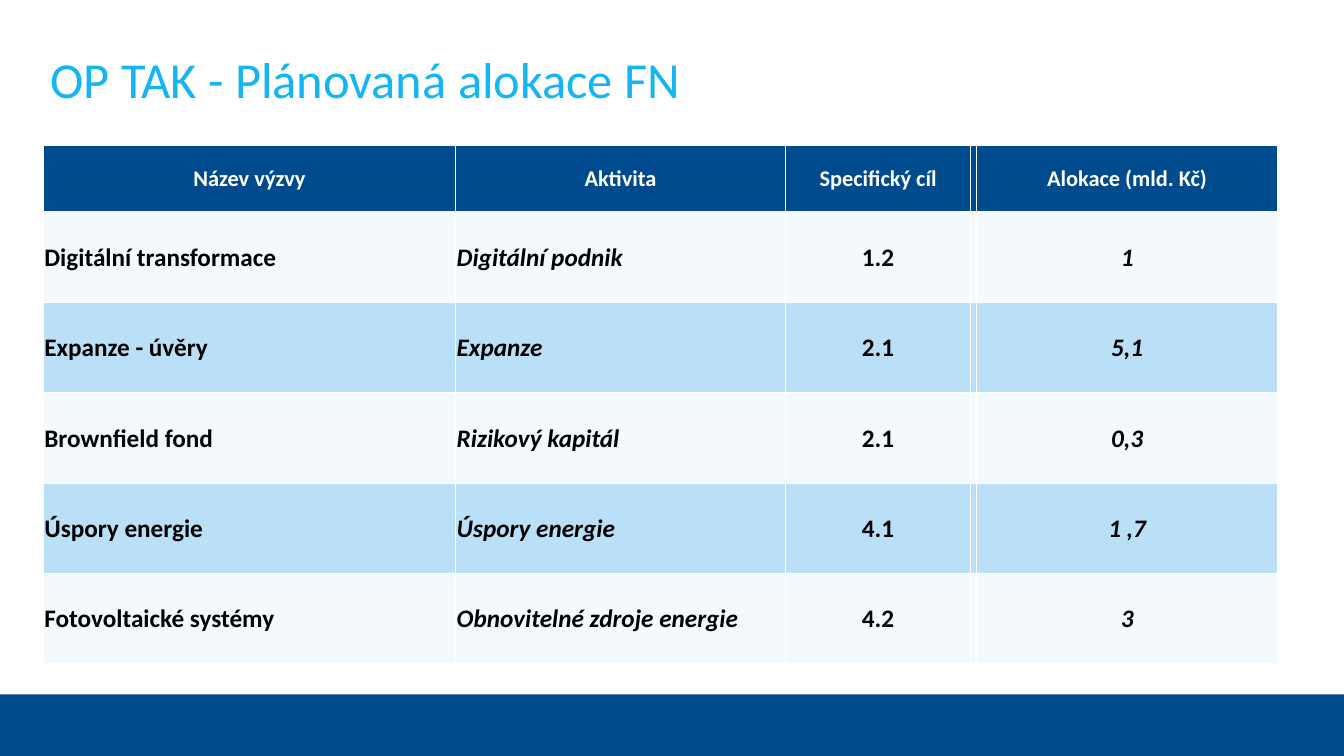
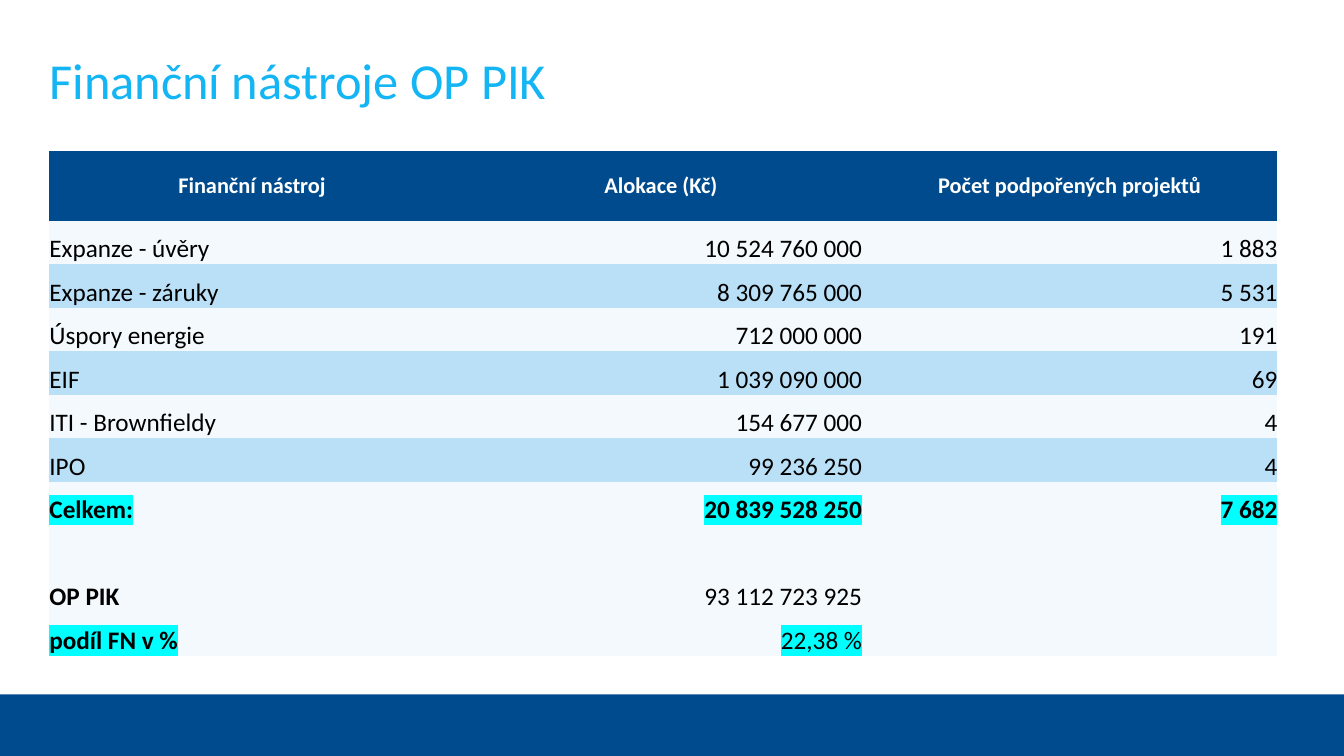
from dataclasses import dataclass

from lxml.etree import SubElement
from pptx import Presentation
from pptx.dml.color import RGBColor
from pptx.enum.shapes import MSO_SHAPE
from pptx.enum.text import MSO_ANCHOR, PP_ALIGN
from pptx.oxml.ns import qn
from pptx.util import Inches, Pt

COLORS = {
    "navy": "004B8D",
    "sky": "13B5F4",
    "white": "FFFFFF",
    "black": "000000",
    "light": "F3F9FD",
    "stripe": "B9E0F7",
    "marker": "00FFFF",
}
FONT = "Calibri"
PLAIN_TABLE_STYLE = "{2D5ABB26-0587-4C30-8999-92F81FD0307C}"
LEFT, CENTER, RIGHT = PP_ALIGN.LEFT, PP_ALIGN.CENTER, PP_ALIGN.RIGHT


@dataclass
class Look:
    """Text style of a table cell."""
    align: PP_ALIGN = LEFT
    anchor: MSO_ANCHOR = MSO_ANCHOR.MIDDLE
    size: int = 18
    color: str = "black"
    bold: bool = False
    italic: bool = False
    marked: bool = False


HEADER = Look(CENTER, size=16, color="white", bold=True)

# Planned allocation: widths, looks and rows; the fourth column is a thin gap
PLAN_WIDTHS = [4.09, 3.27, 1.84, 0.06, 2.98]
PLAN_LOOKS = [
    Look(bold=True),
    Look(bold=True, italic=True),
    Look(CENTER, bold=True),
    Look(),
    Look(CENTER, bold=True, italic=True),
]
PLAN_ROWS = [
    ["Název výzvy", "Aktivita", "Specifický cíl", "", "Alokace (mld. Kč)"],
    ["Digitální transformace", "Digitální podnik", "1.2", "", "1"],
    ["Expanze - úvěry", "Expanze", "2.1", "", "5,1"],
    ["Brownfield fond", "Rizikový kapitál", "2.1", "", "0,3"],
    ["Úspory energie", "Úspory energie", "4.1", "", "1 ,7"],
    ["Fotovoltaické systémy", "Obnovitelné zdroje energie", "4.2", "", "3"],
]

# Financial instruments: widths and rows, with totals after the striped rows
RESULT_WIDTHS = [4.07, 3.99, 4.12]
RESULT_ROWS = [
    ["Finanční nástroj ", "Alokace (Kč)", "Počet podpořených projektů"],
    ["Expanze - úvěry", "10 524 760 000", "1 883"],
    ["Expanze - záruky", "8 309 765 000", "5 531"],
    ["Úspory energie", "712 000 000", "191"],
    ["EIF", "1 039 090 000", "69"],
    ["ITI - Brownfieldy", "154 677 000", "4"],
    ["IPO", "99 236 250", "4"],
    ["Celkem:", "20 839 528 250", "7 682"],
    ["", "", ""],
    ["OP PIK", "93 112 723 925", ""],
    ["podíl FN v %", "22,38 %", ""],
]
TOTAL_ROW, PROGRAM_ROW, SHARE_ROW = 7, 9, 10


def rgb(name):
    return RGBColor.from_string(COLORS[name])


def add_span(para, text, look):
    span = para.add_run()
    span.text = text
    font = span.font
    font.size = Pt(look.size)
    font.bold, font.italic = look.bold, look.italic
    font.color.rgb = rgb(look.color)
    font.name = FONT
    if look.marked:
        properties = span._r.get_or_add_rPr()
        highlight = SubElement(properties, qn("a:highlight"))
        SubElement(highlight, qn("a:srgbClr"), val=COLORS["marker"])
        properties.find(qn("a:solidFill")).addnext(highlight)


def add_page(deck, title, left, top):
    """Page with a white area above the navy band, and a title."""
    page = deck.slides.add_slide(deck.slide_layouts[6])
    page.background.fill.solid()
    page.background.fill.fore_color.rgb = rgb("navy")
    area = page.shapes.add_shape(
        MSO_SHAPE.RECTANGLE, 0, 0, deck.slide_width, Inches(6.89))
    area.shadow.inherit = False
    area.fill.solid()
    area.fill.fore_color.rgb = rgb("white")
    area.line.fill.background()

    box = page.shapes.add_textbox(
        Inches(left), Inches(top), Inches(12.02), Inches(0.61))
    frame = box.text_frame
    frame.word_wrap = True
    frame.margin_left = frame.margin_right = 0
    frame.margin_top = frame.margin_bottom = 0
    add_span(frame.paragraphs[0], title, Look(size=36, color="sky"))
    return page


def add_borders(cell):
    properties = cell._tc.get_or_add_tcPr()
    for side in ("lnL", "lnR", "lnT", "lnB"):
        line = SubElement(properties, qn(f"a:{side}"), w=str(Pt(1)))
        fill = SubElement(line, qn("a:solidFill"))
        SubElement(fill, qn("a:srgbClr"), val=COLORS["white"])


def fill_cell(cell, text, look, fill, margin):
    cell.margin_left = cell.margin_right = cell.margin_top = Inches(margin)
    cell.margin_bottom = 0
    cell.vertical_anchor = look.anchor
    cell.fill.solid()
    cell.fill.fore_color.rgb = rgb(fill)
    if text:
        para = cell.text_frame.paragraphs[0]
        para.alignment = look.align
        add_span(para, text, look)


def add_grid(page, place, header_height, widths, rows, look_at,
             striped_until, margin=0, bordered=False):
    """Table with a navy header; the body rows share the remaining height."""
    left, top, height = place
    table = page.shapes.add_table(
        len(rows), len(widths), Inches(left), Inches(top),
        Inches(sum(widths)), Inches(height)).table
    table._tbl.tblPr.find(qn("a:tableStyleId")).text = PLAIN_TABLE_STYLE
    for column, width in zip(table.columns, widths):
        column.width = Inches(width)
    body_height = (height - header_height) / (len(rows) - 1)
    for r, texts in enumerate(rows):
        table.rows[r].height = Inches(body_height if r else header_height)
        striped = r % 2 == 0 and r <= striped_until
        fill = "navy" if r == 0 else "stripe" if striped else "light"
        for c, text in enumerate(texts):
            cell = table.cell(r, c)
            if bordered:
                add_borders(cell)
            look = look_at(r, c) if r else HEADER
            fill_cell(cell, text, look, fill, margin)


def plan_look(row, column):
    return PLAN_LOOKS[column]


def result_look(row, column):
    summary = row in (PROGRAM_ROW, SHARE_ROW)
    return Look(
        RIGHT if column else LEFT,
        MSO_ANCHOR.BOTTOM,
        bold=row == TOTAL_ROW or (summary and column == 0),
        marked=row in (TOTAL_ROW, SHARE_ROW),
    )


def main():
    deck = Presentation()
    deck.slide_width, deck.slide_height = Inches(13.33), Inches(7.5)

    # Planned allocation
    page = add_page(deck, "OP TAK - Plánovaná alokace FN", 0.5, 0.48)
    add_grid(page, (0.43, 1.44, 5.15), 0.66, PLAN_WIDTHS, PLAN_ROWS,
             plan_look, striped_until=5, margin=0.01, bordered=True)

    # Financial instruments
    page = add_page(deck, "Finanční nástroje OP PIK", 0.49, 0.49)
    add_grid(page, (0.49, 1.5, 5.01), 0.69, RESULT_WIDTHS, RESULT_ROWS,
             result_look, striped_until=6)

    deck.save("out.pptx")


if __name__ == "__main__":
    main()
